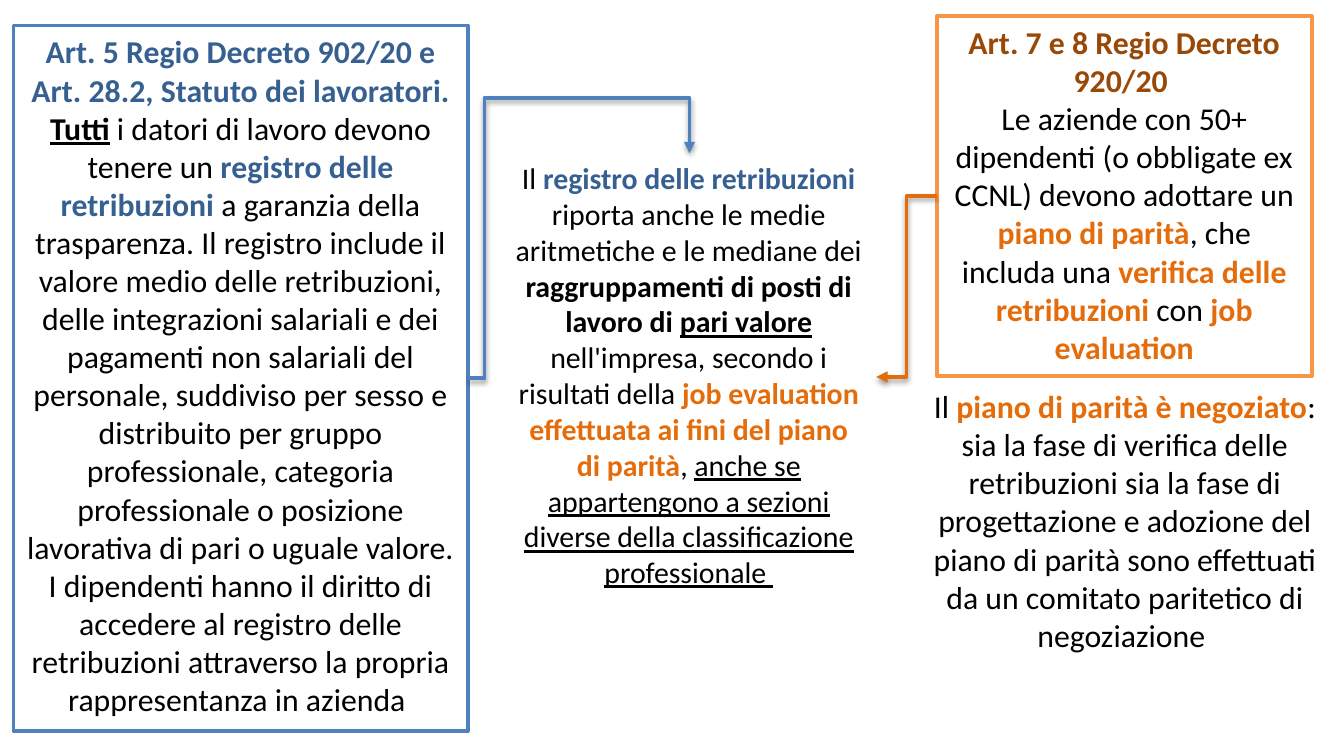
from dataclasses import dataclass

from lxml import etree
from pptx import Presentation
from pptx.dml.color import RGBColor
from pptx.enum.shapes import MSO_CONNECTOR, MSO_SHAPE
from pptx.enum.text import MSO_ANCHOR, MSO_AUTO_SIZE, PP_ALIGN
from pptx.oxml.ns import qn
from pptx.slide import Slide
from pptx.util import Inches, Pt

RECTANGLE = MSO_SHAPE.RECTANGLE
ELBOW = MSO_CONNECTOR.ELBOW
CENTER = PP_ALIGN.CENTER
TOP = MSO_ANCHOR.TOP
GROW = MSO_AUTO_SIZE.SHAPE_TO_FIT_TEXT

CELL = 0.1  # inches per grid column and row
COLUMNS, ROWS = 100, 56.25
FONT = "Calibri"
LINE_WIDTH = 2
BLACK, WHITE = "000000", "FFFFFF"
BLUE, DARK_BLUE = "4F81BD", "376092"
LIGHT_ORANGE, ORANGE, BROWN = "F79646", "E46C0A", "984807"


@dataclass
class Span:
    text: str
    color: str = BLACK
    bold: bool = False
    underline: bool = False


@dataclass
class TextBlock:
    """A text at a grid place, framed when it has an outline."""
    column: float
    row: float
    columns: float
    rows: float
    size: int
    paras: list[list[Span]]
    outline: str = ""


@dataclass
class Arrow:
    start: tuple[float, float]
    end: tuple[float, float]
    color: str
    preset: str = "bentConnector3"
    bends: tuple[float, ...] = (0.5,)


REGISTER = TextBlock(1, 1.9, 33.8, 52.5, 17, [
    [Span("Art. 5 Regio Decreto 902/20 e Art. 28.2, Statuto dei lavoratori.", DARK_BLUE, True)],
    [Span("Tutti", bold=True, underline=True),
     Span(" i datori di lavoro devono tenere un "),
     Span("registro delle retribuzioni ", DARK_BLUE, True),
     Span("a garanzia della trasparenza. Il registro include il valore medio delle "
          "retribuzioni, delle integrazioni salariali e dei pagamenti non salariali del "
          "personale, suddiviso per sesso e distribuito per gruppo professionale, categoria "
          "professionale o posizione lavorativa di pari o uguale valore. I dipendenti hanno "
          "il diritto di accedere al registro delle retribuzioni attraverso la propria "
          "rappresentanza in azienda ")],
], BLUE)

AVERAGES = TextBlock(37.3, 11.4, 27.9, 33.3, 16, [
    [Span("Il "),
     Span("registro delle retribuzioni ", DARK_BLUE, True),
     Span("riporta anche le medie aritmetiche e le mediane dei "),
     Span("raggruppamenti di posti di lavoro di ", bold=True),
     Span("pari valore", bold=True, underline=True),
     Span(" ", underline=True),
     Span("nell'impresa, secondo i risultati della "),
     Span("job evaluation effettuata ai fini del piano di parità", ORANGE, True),
     Span(", "),
     Span("anche se appartengono a sezioni diverse della classificazione professionale ",
          underline=True)],
])

EQUALITY_PLAN = TextBlock(69.7, 1.2, 27.9, 26.8, 17, [
    [Span("Art. 7 e 8 Regio Decreto 920/20 ", BROWN, True)],
    [Span("Le aziende con 50+ dipendenti (o obbligate ex CCNL) devono adottare un "),
     Span("piano di parità", ORANGE, True),
     Span(", che includa una "),
     Span("verifica delle retribuzioni", ORANGE, True),
     Span(" con "),
     Span("job evaluation", ORANGE, True)],
], LIGHT_ORANGE)

NEGOTIATION = TextBlock(68.4, 28.3, 30.6, 26.8, 17, [
    [Span("Il "),
     Span("piano di parità è negoziato", ORANGE, True),
     Span(": sia la fase di verifica delle retribuzioni sia la fase di progettazione e "
          "adozione del piano di parità sono effettuati da un comitato paritetico di "
          "negoziazione ")],
])

ARROWS = [
    Arrow((34.8, 28.15), (51.3, 11.4), BLUE, "bentConnector4", (0.076, 1.246)),
    Arrow((69.7, 14.6), (65.2, 28.05), ORANGE),
]


def cells(count: float) -> int:
    return Inches(count * CELL)


def rgb(color: str) -> RGBColor:
    return RGBColor.from_string(color)


def add_block(slide: Slide, block: TextBlock) -> None:
    place = [cells(n) for n in (block.column, block.row, block.columns, block.rows)]
    if block.outline:
        box = slide.shapes.add_shape(RECTANGLE, *place)
        box.shadow.inherit = False
        box.fill.solid()
        box.fill.fore_color.rgb = rgb(WHITE)
        box.line.color.rgb = rgb(block.outline)
        box.line.width = Pt(LINE_WIDTH)
    else:
        box = slide.shapes.add_textbox(*place)
    frame = box.text_frame
    frame.word_wrap = True
    frame.auto_size = GROW
    frame.vertical_anchor = TOP
    for index, spans in enumerate(block.paras):
        para = frame.add_paragraph() if index else frame.paragraphs[0]
        para.alignment = CENTER
        for span in spans:
            run = para.add_run()
            run.text = span.text
            run.font.name = FONT
            run.font.size = Pt(block.size)
            run.font.bold = span.bold
            run.font.underline = span.underline
            run.font.color.rgb = rgb(span.color)


def add_arrow(slide: Slide, arrow: Arrow) -> None:
    ends = [cells(n) for n in (*arrow.start, *arrow.end)]
    connector = slide.shapes.add_connector(ELBOW, *ends)
    connector.line.color.rgb = rgb(arrow.color)
    connector.line.width = Pt(LINE_WIDTH)
    properties = connector.element.spPr

    geometry = properties.find(qn("a:prstGeom"))
    geometry.set("prst", arrow.preset)
    guides = geometry.find(qn("a:avLst"))
    for number, bend in enumerate(arrow.bends, 1):
        etree.SubElement(guides, qn("a:gd"), name=f"adj{number}",
                         fmla=f"val {round(bend * 100000)}")

    etree.SubElement(properties.find(qn("a:ln")), qn("a:tailEnd"), type="triangle")
    effects = etree.SubElement(properties, qn("a:effectLst"))
    shadow = etree.SubElement(effects, qn("a:outerShdw"), blurRad=str(Pt(3.1)),
                              dist=str(Pt(1.6)), dir="5400000", rotWithShape="0")
    shade = etree.SubElement(shadow, qn("a:srgbClr"), val=BLACK)
    etree.SubElement(shade, qn("a:alpha"), val="38000")


def main() -> None:
    deck = Presentation()
    deck.slide_width, deck.slide_height = cells(COLUMNS), cells(ROWS)
    slide = deck.slides.add_slide(deck.slide_layouts.get_by_name("Blank"))
    for block in (REGISTER, AVERAGES, EQUALITY_PLAN, NEGOTIATION):
        add_block(slide, block)
    for arrow in ARROWS:
        add_arrow(slide, arrow)
    deck.save("out.pptx")


if __name__ == "__main__":
    main()
